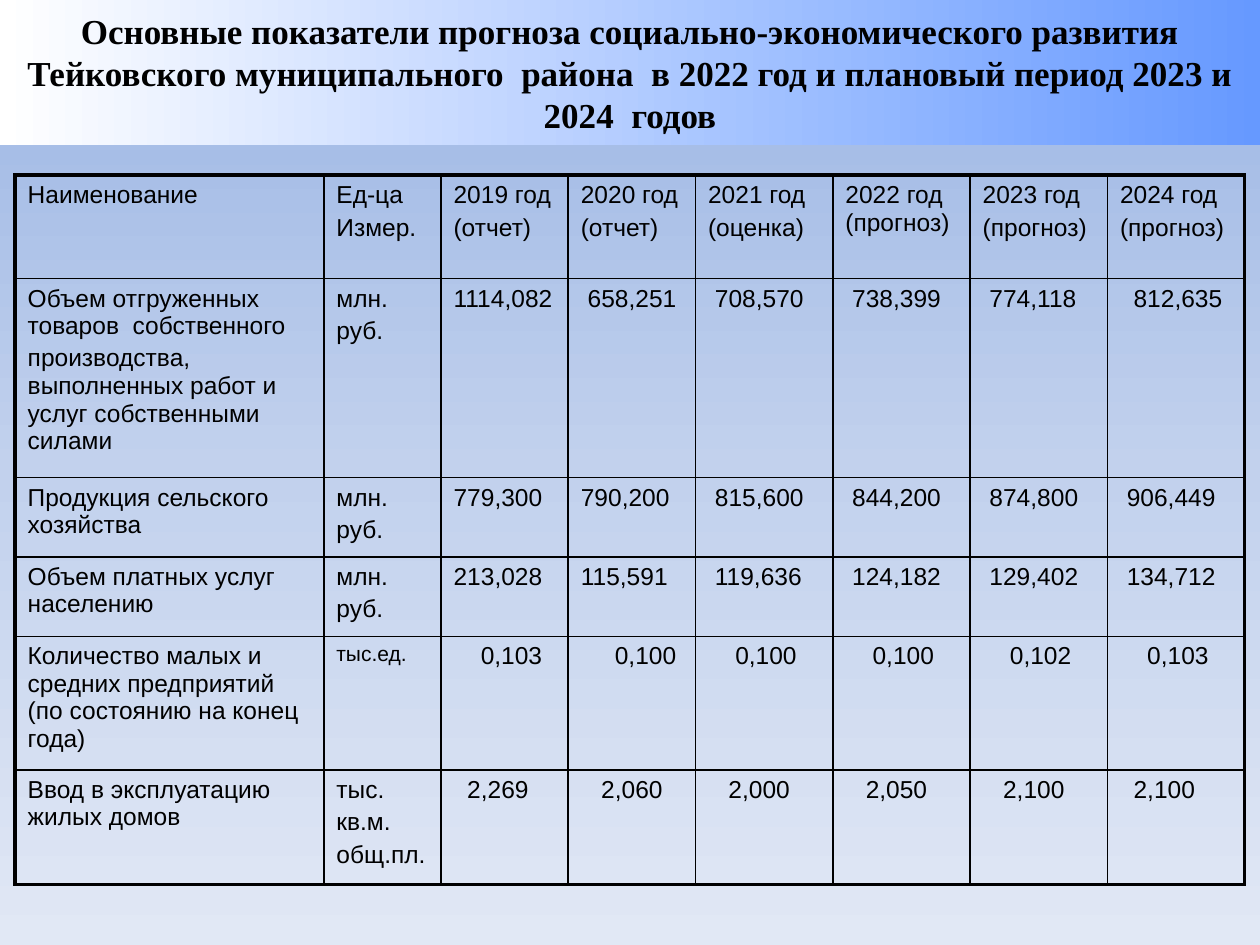
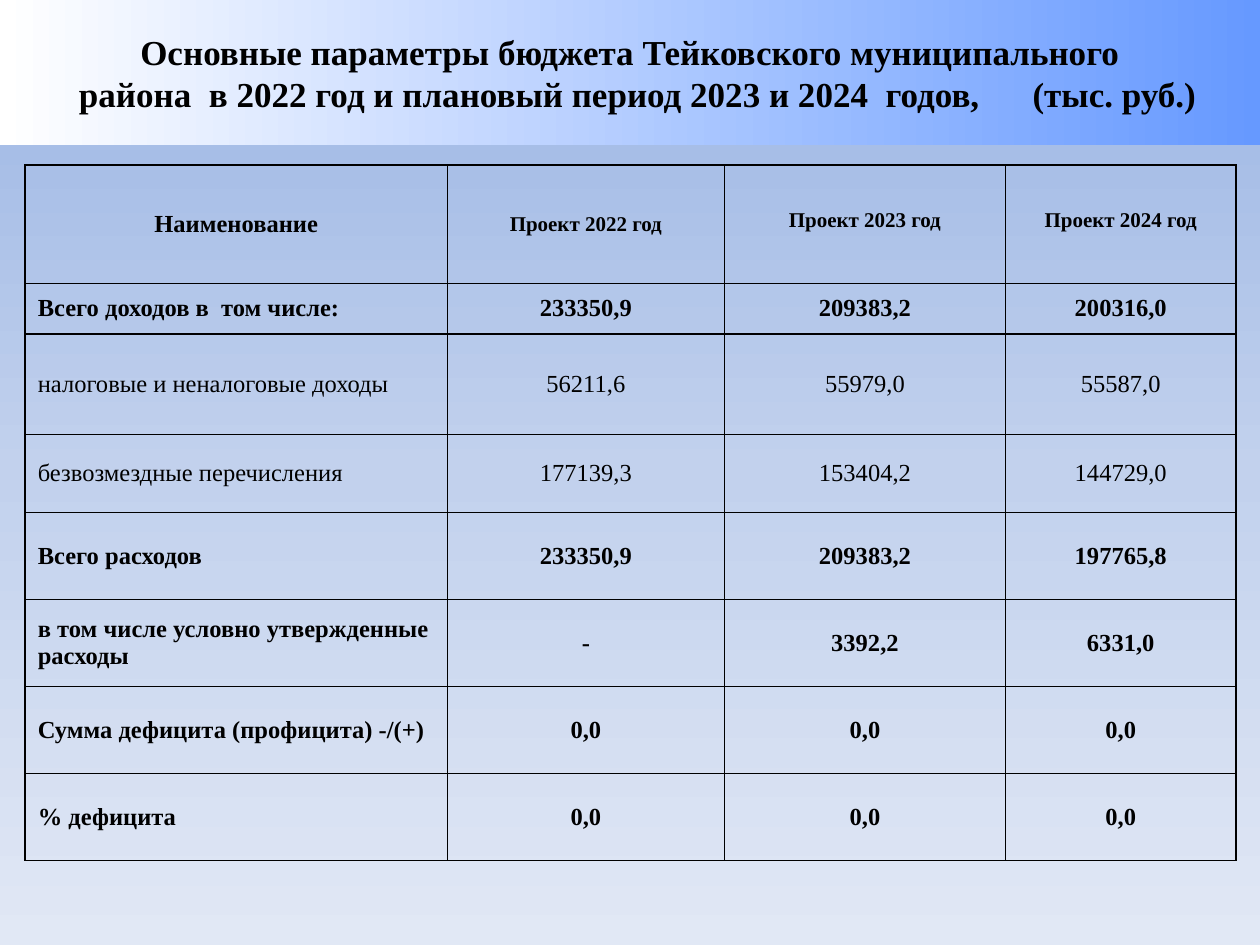
from dataclasses import dataclass, field
from typing import Optional

from lxml.etree import SubElement
from pptx import Presentation
from pptx.dml.color import RGBColor
from pptx.enum.shapes import MSO_SHAPE
from pptx.enum.text import MSO_ANCHOR, PP_ALIGN
from pptx.oxml.ns import qn
from pptx.util import Inches, Pt


@dataclass(frozen=True)
class Theme:
    ink: str = "000000"
    page: tuple = ((0, "9AB5E4"), (50, "C2D1ED"), (100, "E1E8F5"))
    band: tuple = ((0, "FFFFFF"), (100, "6699FF"))
    serif: str = "Times New Roman"
    sans: str = "Arial"
    title_size: float = 20
    body_size: float = 14
    small_size: float = 12
    thin_rule: float = 1
    frame_rule: float = 2.25
    digit_step: float = 0.054
    paragraph_gap: float = 2.8


THEME = Theme()


@dataclass(frozen=True)
class Entry:
    text: str
    size: float = THEME.body_size
    bold: bool = False
    align: PP_ALIGN = PP_ALIGN.LEFT
    anchor: MSO_ANCHOR = MSO_ANCHOR.TOP
    indent: float = 0
    bottom: float = 0.05


@dataclass(frozen=True)
class Grid:
    left: float
    top: float
    columns: list[float]
    heights: list[float]
    rows: list[list[Entry]]
    font: str
    frame: float
    gap: float = 0


@dataclass(frozen=True)
class TitleLine:
    text: str
    unit: Optional[str] = None
    indent: float = 0


@dataclass(frozen=True)
class Indicator:
    name: str
    unit: str
    values: str
    indents: list[int]
    unit_size: float = THEME.body_size


@dataclass(frozen=True)
class BudgetLine:
    name: str
    values: list[str] = field(default_factory=lambda: ["0,0"] * 3)
    bold: bool = True


INDICATOR_HEADINGS = [
    "Наименование", "Ед-ца\nИзмер.", "2019 год\n(отчет)", "2020 год\n(отчет)",
    "2021 год\n(оценка)", "2022 год (прогноз)", "2023 год\n(прогноз)",
    "2024 год\n(прогноз)",
]

INDICATORS = [
    Indicator(
        "Объем отгруженных товаров  собственного\n"
        "производства, выполненных работ и услуг собственными силами",
        "млн.\nруб.", "1114,082 658,251 708,570 738,399 774,118 812,635",
        [0, 1, 1, 1, 1, 2]),
    Indicator("Продукция сельского хозяйства", "млн.\nруб.",
              "779,300 790,200 815,600 844,200 874,800 906,449",
              [0, 0, 1, 1, 1, 1]),
    Indicator("Объем платных услуг населению", "млн.\nруб.",
              "213,028 115,591 119,636 124,182 129,402 134,712",
              [0, 0, 1, 1, 1, 1]),
    Indicator("Количество малых и средних предприятий (по состоянию на конец года)",
              "тыс.ед.", "0,103 0,100 0,100 0,100 0,102 0,103",
              [4, 5, 4, 4, 4, 4], THEME.small_size),
    Indicator("Ввод в эксплуатацию жилых домов", "тыс.\nкв.м.\nобщ.пл.",
              "2,269 2,060 2,000 2,050 2,100 2,100",
              [2, 3, 3, 3, 3, 2]),
]

BUDGET_LINES = [
    BudgetLine("Всего доходов в  том числе:", ["233350,9", "209383,2", "200316,0"]),
    BudgetLine("налоговые и неналоговые доходы", ["56211,6", "55979,0", "55587,0"], False),
    BudgetLine("безвозмездные перечисления", ["177139,3", "153404,2", "144729,0"], False),
    BudgetLine("Всего расходов", ["233350,9", "209383,2", "197765,8"]),
    BudgetLine("в том числе условно утвержденные расходы", ["-", "3392,2", "6331,0"]),
    BudgetLine("Сумма дефицита (профицита) -/(+)"),
    BudgetLine("% дефицита"),
]


def paint_gradient(fill, owner, stops: tuple, angle: float) -> None:
    fill.gradient()
    fill.gradient_angle = angle
    stop_list = next(owner.iter(qn("a:gsLst")))
    for old_stop in list(stop_list):
        stop_list.remove(old_stop)
    for percent, colour in stops:
        stop = SubElement(stop_list, qn("a:gs"), pos=str(percent * 1000))
        SubElement(stop, qn("a:srgbClr"), val=colour)


def style_font(font, name: str, size: float, bold: bool) -> None:
    font.name = name
    font.size = Pt(size)
    font.bold = bold
    font.color.rgb = RGBColor.from_string(THEME.ink)


def add_title_band(slide, lines: list[TitleLine]) -> None:
    band = slide.shapes.add_shape(MSO_SHAPE.RECTANGLE, 0, 0, Inches(10), Inches(1.15))
    band.shadow.inherit = False
    band.line.fill.background()
    paint_gradient(band.fill, band.element, THEME.band, 0)
    frame = band.text_frame
    frame.word_wrap = True
    frame.vertical_anchor = MSO_ANCHOR.MIDDLE
    frame.text = "\n".join(line.text for line in lines)
    for paragraph, line in zip(frame.paragraphs, lines):
        paragraph.alignment = PP_ALIGN.CENTER
        style_font(paragraph.font, THEME.serif, THEME.title_size, True)
        if line.indent:
            properties = paragraph._p.get_or_add_pPr()
            properties.set("marL", str(Inches(line.indent)))
        if line.unit:
            wide_space = paragraph.add_run()
            wide_space.text = " "
            wide_space.font._element.set("spc", "2500")
            paragraph.add_run().text = line.unit


def draw_borders(cell, widths: dict[str, float]) -> None:
    properties = cell._tc.get_or_add_tcPr()
    for position, (side, width) in enumerate(widths.items()):
        rule = SubElement(properties, qn(f"a:ln{side}"), w=str(Pt(width)))
        fill = SubElement(rule, qn("a:solidFill"))
        SubElement(fill, qn("a:srgbClr"), val=THEME.ink)
        properties.insert(position, rule)


def fill_cell(cell, entry: Entry, grid: Grid) -> None:
    cell.fill.background()
    cell.vertical_anchor = entry.anchor
    cell.margin_left = Inches(0.1 + entry.indent)
    cell.margin_right = Inches(0.1)
    cell.margin_top = Inches(0.05)
    cell.margin_bottom = Inches(entry.bottom)
    cell.text = entry.text
    for paragraph in cell.text_frame.paragraphs:
        paragraph.alignment = entry.align
        paragraph.space_before = Pt(grid.gap)
        style_font(paragraph.font, grid.font, entry.size, entry.bold)


def add_grid(slide, grid: Grid) -> None:
    row_count, column_count = len(grid.heights), len(grid.columns)
    table = slide.shapes.add_table(
        row_count, column_count, Inches(grid.left), Inches(grid.top),
        Inches(sum(grid.columns)), Inches(sum(grid.heights))).table
    table.first_row = table.horz_banding = False
    for column, width in zip(table.columns, grid.columns):
        column.width = Inches(width)
    for row, height in zip(table.rows, grid.heights):
        row.height = Inches(height)
    for r, entries in enumerate(grid.rows):
        for c, entry in enumerate(entries):
            cell = table.cell(r, c)
            fill_cell(cell, entry, grid)
            outer = {"L": c == 0, "R": c == column_count - 1,
                     "T": r == 0, "B": r == row_count - 1}
            draw_borders(cell, {side: grid.frame if edge else THEME.thin_rule
                                for side, edge in outer.items()})


def indicator_row(indicator: Indicator) -> list[Entry]:
    values = [Entry(value, indent=steps * THEME.digit_step)
              for value, steps in zip(indicator.values.split(), indicator.indents)]
    return [Entry(indicator.name), Entry(indicator.unit, indicator.unit_size), *values]


def budget_entry(text: str, bold: bool = True, align: PP_ALIGN = PP_ALIGN.CENTER,
                 size: float = THEME.body_size) -> Entry:
    return Entry(text, size, bold, align, MSO_ANCHOR.MIDDLE)


def budget_row(line: BudgetLine) -> list[Entry]:
    return [budget_entry(line.name, line.bold, PP_ALIGN.LEFT),
            *(budget_entry(value, line.bold) for value in line.values)]


def budget_headings() -> list[Entry]:
    later_years = [Entry(f"Проект {year} год", THEME.small_size, True, PP_ALIGN.CENTER,
                         MSO_ANCHOR.BOTTOM, bottom=0.41) for year in (2023, 2024)]
    return [budget_entry("Наименование"),
            budget_entry("Проект 2022 год", size=THEME.small_size), *later_years]


def build_indicators(slide) -> None:
    add_title_band(slide, [TitleLine(
        "Основные показатели прогноза социально-экономического развития "
        "Тейковского муниципального  района  в 2022 год и плановый период "
        "2023 и 2024  годов")])
    add_grid(slide, Grid(
        0.12, 1.39, [2.45, 0.93] + [1.01] * 2 + [1.09] * 4,
        [0.82, 1.58, 0.63, 0.63, 1.06, 0.91],
        [[Entry(heading) for heading in INDICATOR_HEADINGS],
         *map(indicator_row, INDICATORS)],
        THEME.sans, THEME.frame_rule, THEME.paragraph_gap))


def build_budget(slide) -> None:
    add_title_band(slide, [
        TitleLine("Основные параметры бюджета Тейковского муниципального"),
        TitleLine("района  в 2022 год и плановый период 2023 и 2024  годов,",
                  "(тыс. руб.)", 0.12)])
    add_grid(slide, Grid(
        0.2, 1.31, [3.35, 2.2, 2.23, 1.83],
        [0.94, 0.4, 0.8, 0.62] + [0.69] * 4,
        [budget_headings(), *map(budget_row, BUDGET_LINES)],
        THEME.serif, THEME.thin_rule))


def main() -> None:
    deck = Presentation()
    deck.slide_width, deck.slide_height = Inches(10), Inches(7.5)
    master = deck.slide_master
    paint_gradient(master.background.fill, master.element, THEME.page, 270)
    for build in (build_indicators, build_budget):
        build(deck.slides.add_slide(deck.slide_layouts[6]))
    deck.save("out.pptx")


if __name__ == "__main__":
    main()
